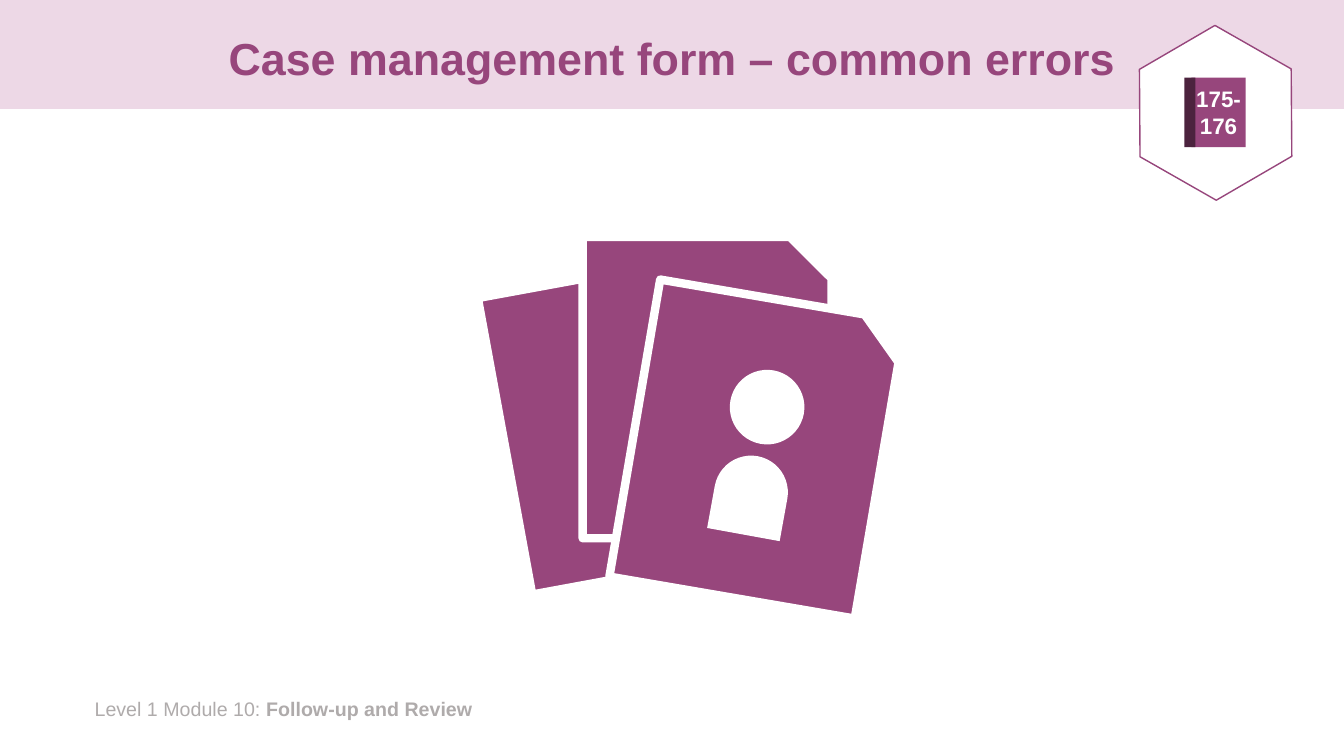
"""Build the slide on common errors in the case management form."""
from pptx import Presentation
from pptx.dml.color import RGBColor
from pptx.enum import shapes, text
from pptx.util import Pt

PLUM, DARK_PLUM, PINK, WHITE, GREY = "97467C", "4C233E", "EDD8E6", "FFFFFF", "AFABAB"
SLIDE_SIZE = (960, 540)
TITLE = "Case management form – common errors"
FOOTER = [("Level 1 Module 10: ", False), ("Follow-up and Review", True)]
PAGES = ["175-", "176"]

CARD_SIZE = (177.8, 215.3)
CARDS = [(359.3, 195.1, -10.4), (416.2, 169.2, 0), (452.2, 213.1, 9.7)]
PERSON_TILT = 10.3
BODY_BOX = (509.8, 325.4, 52.6, 56.9)
HEAD_BOX = (521.3, 264.2, 53.3, 53.3)
HEXAGON_BOX = (805.7, 26.6, 125.3, 108)
BOOK_BOX = (851, 55.4, 38.9, 49.7)
SPINE_BOX = (846, 55.4, 7.9, 49.7)

KIND = shapes.MSO_SHAPE


def color(hex_value):
    return RGBColor.from_string(hex_value)


def set_all(target, values):
    for name, value in values.items():
        setattr(target, name, value)


def add_part(kind, box, fill, outline=None, width=0, tilt=0, adjust=()):
    part = slide.shapes.add_shape(kind, *map(Pt, box))
    part.shadow.inherit = False
    part.rotation = tilt
    part.fill.solid()
    part.fill.fore_color.rgb = color(fill)
    if outline:
        part.line.color.rgb = color(outline)
        part.line.width = Pt(width)
    else:
        part.line.fill.background()
    for index, value in enumerate(adjust):
        part.adjustments[index] = value
    return part


def write(paragraph, words, size, hex_value, bold):
    run = paragraph.add_run()
    run.text = words
    set_all(run.font, {"name": "Arial", "size": Pt(size), "bold": bold})
    run.font.color.rgb = color(hex_value)


deck = Presentation()
set_all(deck, dict(zip(("slide_width", "slide_height"), map(Pt, SLIDE_SIZE))))
slide = deck.slides.add_slide(deck.slide_layouts[5])

title = slide.shapes.title
set_all(title, {"left": Pt(66.2), "top": Pt(9.4), "width": Pt(828), "height": Pt(68.4)})
set_all(title.text_frame, {"vertical_anchor": text.MSO_ANCHOR.MIDDLE, "word_wrap": True})
heading = title.text_frame.paragraphs[0]
set_all(heading, {"alignment": text.PP_ALIGN.CENTER, "line_spacing": 0.9})
write(heading, TITLE, 32, PLUM, True)

band = add_part(KIND.RECTANGLE, (0, 0, SLIDE_SIZE[0], 77.8), PINK)
title.element.addprevious(band.element)

footer = slide.shapes.add_textbox(*map(Pt, (60.5, 494.6, 327.6, 24.5))).text_frame
footer.word_wrap = True
for words, bold in FOOTER:
    write(footer.paragraphs[0], words, 14, GREY, bold)

for left, top, tilt in CARDS:
    add_part(KIND.SNIP_1_RECTANGLE, (left, top, *CARD_SIZE), PLUM, WHITE, 6, tilt)
add_part(KIND.ROUND_2_SAME_RECTANGLE, BODY_BOX, WHITE, tilt=PERSON_TILT, adjust=(0.5, 0))
add_part(KIND.OVAL, HEAD_BOX, WHITE, tilt=PERSON_TILT)

add_part(KIND.HEXAGON, HEXAGON_BOX, WHITE, PLUM, 1, 29.7, (0.29, 1.155))
book = add_part(KIND.RECTANGLE, BOOK_BOX, PLUM).text_frame
set_all(book, {"word_wrap": False, "vertical_anchor": text.MSO_ANCHOR.MIDDLE})
for index, page in enumerate(PAGES):
    line = book.add_paragraph() if index else book.paragraphs[0]
    line.alignment = text.PP_ALIGN.CENTER
    write(line, page, 16, WHITE, True)
add_part(KIND.RECTANGLE, SPINE_BOX, DARK_PLUM)

deck.save("out.pptx")
